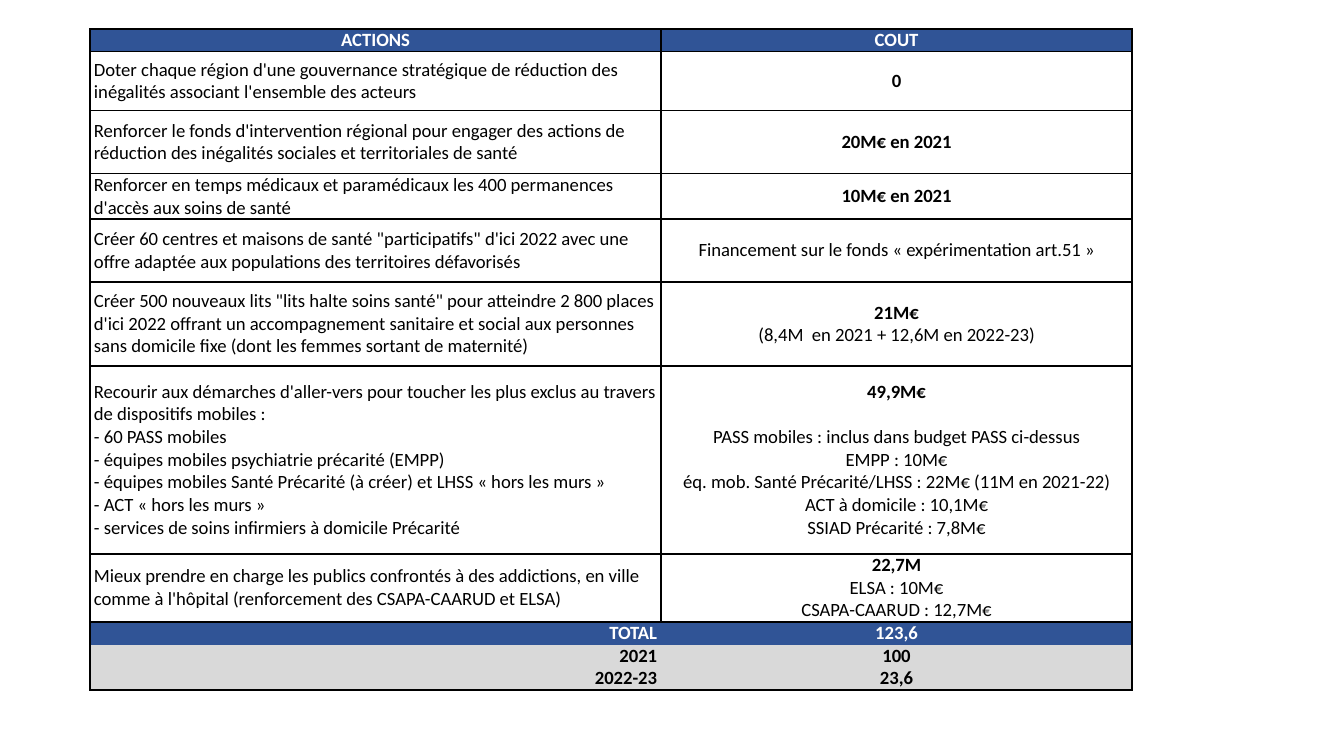
from dataclasses import dataclass

from lxml.etree import SubElement
from pptx import Presentation
from pptx.dml.color import RGBColor
from pptx.enum.text import MSO_ANCHOR, PP_ALIGN
from pptx.oxml.ns import qn
from pptx.util import Pt

EMU_PER_PX = 914400 / 134.4


def px(length):
    return round(length * EMU_PER_PX)


@dataclass(frozen=True)
class Theme:
    font: str = "Calibri"
    size: int = 10
    blue: str = "305496"
    grey: str = "D9D9D9"
    white: str = "FFFFFF"
    black: str = "000000"
    border: int = 1


class SlideBuilder:
    def __init__(self, page, theme):
        self.page = page
        self.theme = theme

    def table(self, left, top, widths, heights):
        frame = self.page.shapes.add_table(
            len(heights), len(widths), px(left), px(top), px(sum(widths)), px(sum(heights)))
        table = frame.table
        table.first_row = table.horz_banding = False
        for column, width in zip(table.columns, widths):
            column.width = px(width)
        for row, height in zip(table.rows, heights):
            row.height = px(height)
        return table

    def cell(self, cell, lines, align, fill=None, color=None, bold_lines=0,
             gap=0, anchor=MSO_ANCHOR.MIDDLE, sides="LRTB"):
        """Fill one cell; the first bold_lines are bold and gap follows the first line."""
        cell.margin_left = cell.margin_right = px(4)
        cell.margin_top = cell.margin_bottom = 0
        cell.vertical_anchor = anchor
        cell.text_frame.text = lines
        for index, para in enumerate(cell.text_frame.paragraphs):
            para.alignment = align
            if index == 0 and gap:
                para.space_after = Pt(gap)
            for span in para.runs:
                span.font.name = self.theme.font
                span.font.size = Pt(self.theme.size)
                span.font.bold = index < bold_lines
                span.font.color.rgb = RGBColor.from_string(color or self.theme.black)
        if fill:
            cell.fill.solid()
            cell.fill.fore_color.rgb = RGBColor.from_string(fill)
        else:
            cell.fill.background()
        self.borders(cell, sides)

    def borders(self, cell, sides):
        properties = cell._tc.get_or_add_tcPr()
        for position, side in enumerate("LRTB"):
            line = SubElement(properties, qn(f"a:ln{side}"))
            properties.insert(position, line)
            if side in sides:
                line.set("w", str(Pt(self.theme.border)))
                solid = SubElement(line, qn("a:solidFill"))
                SubElement(solid, qn("a:srgbClr")).set("val", self.theme.black)
            else:
                SubElement(line, qn("a:noFill"))


# Each action: row height, description, cost, bold cost lines, gap after the first cost line
ACTIONS = [
    (59, "Doter chaque région d'une gouvernance stratégique de réduction des inégalités "
         "associant l'ensemble des acteurs", "0", 1, 0),
    (63, "Renforcer le fonds d'intervention régional pour engager des actions de réduction "
         "des inégalités sociales et territoriales de santé", "20M€ en 2021", 1, 0),
    (42, "Renforcer en temps médicaux et paramédicaux les 400 permanences d'accès aux soins "
         "de santé", "10M€ en 2021", 1, 0),
    (63, "Créer 60 centres et maisons de santé \"participatifs\" d'ici 2022 avec une offre "
         "adaptée aux populations des territoires défavorisés",
     "Financement sur le fonds « expérimentation art.51 »", 0, 0),
    (84, "Créer 500 nouveaux lits \"lits halte soins santé\" pour atteindre 2 800 places "
         "d'ici 2022 offrant un accompagnement sanitaire et social aux personnes sans "
         "domicile fixe (dont les femmes sortant de maternité)",
     "21M€\n(8,4M  en 2021 + 12,6M en 2022-23)", 1, 0),
    (188, "Recourir aux démarches d'aller-vers pour toucher les plus exclus au travers de "
          "dispositifs mobiles :\n"
          "- 60 PASS mobiles\n"
          "- équipes mobiles psychiatrie précarité (EMPP)\n"
          "- équipes mobiles Santé Précarité (à créer) et LHSS « hors les murs »\n"
          "- ACT « hors les murs »\n"
          "- services de soins infirmiers à domicile Précarité",
     "49,9M€\n"
     "PASS mobiles : inclus dans budget PASS ci-dessus\n"
     "EMPP : 10M€\n"
     "éq. mob. Santé Précarité/LHSS : 22M€ (11M en 2021-22)\n"
     "ACT à domicile : 10,1M€\n"
     "SSIAD Précarité : 7,8M€", 1, 12),
    (63, "Mieux prendre en charge les publics confrontés à des addictions, en ville comme à "
         "l'hôpital (renforcement des CSAPA-CAARUD et ELSA)",
     "22,7M\nELSA : 10M€\nCSAPA-CAARUD : 12,7M€", 1, 0),
]


def main():
    theme = Theme()
    deck = Presentation()
    deck.slide_width, deck.slide_height = px(1344), px(756)
    page = deck.slides.add_slide(deck.slide_layouts[6])
    builder = SlideBuilder(page, theme)

    totals = [
        ("TOTAL", "123,6", theme.blue, theme.white, MSO_ANCHOR.BOTTOM, "T"),
        ("2021", "100", theme.grey, theme.black, MSO_ANCHOR.BOTTOM, ""),
        ("2022-23", "23,6", theme.grey, theme.black, MSO_ANCHOR.MIDDLE, "B"),
    ]
    heights = [20] + [action[0] for action in ACTIONS] + [22] * len(totals)
    table = builder.table(90, 29, [571, 471], heights)

    # Header
    for column, title in enumerate(["ACTIONS", "COUT"]):
        builder.cell(table.cell(0, column), title, PP_ALIGN.CENTER, theme.blue,
                     theme.white, bold_lines=1)

    # Actions and their costs
    for row, (_, action, cost, bold_lines, gap) in enumerate(ACTIONS, start=1):
        builder.cell(table.cell(row, 0), action, PP_ALIGN.LEFT)
        builder.cell(table.cell(row, 1), cost, PP_ALIGN.CENTER,
                     bold_lines=bold_lines, gap=gap)

    # Totals, bordered on the outside only
    for row, (label, amount, fill, color, anchor, edge) in enumerate(
            totals, start=len(ACTIONS) + 1):
        builder.cell(table.cell(row, 0), label, PP_ALIGN.RIGHT, fill, color, 1,
                     anchor=anchor, sides="L" + edge)
        builder.cell(table.cell(row, 1), amount, PP_ALIGN.CENTER, fill, color, 1,
                     anchor=anchor, sides="R" + edge)

    deck.save("out.pptx")


if __name__ == "__main__":
    main()
